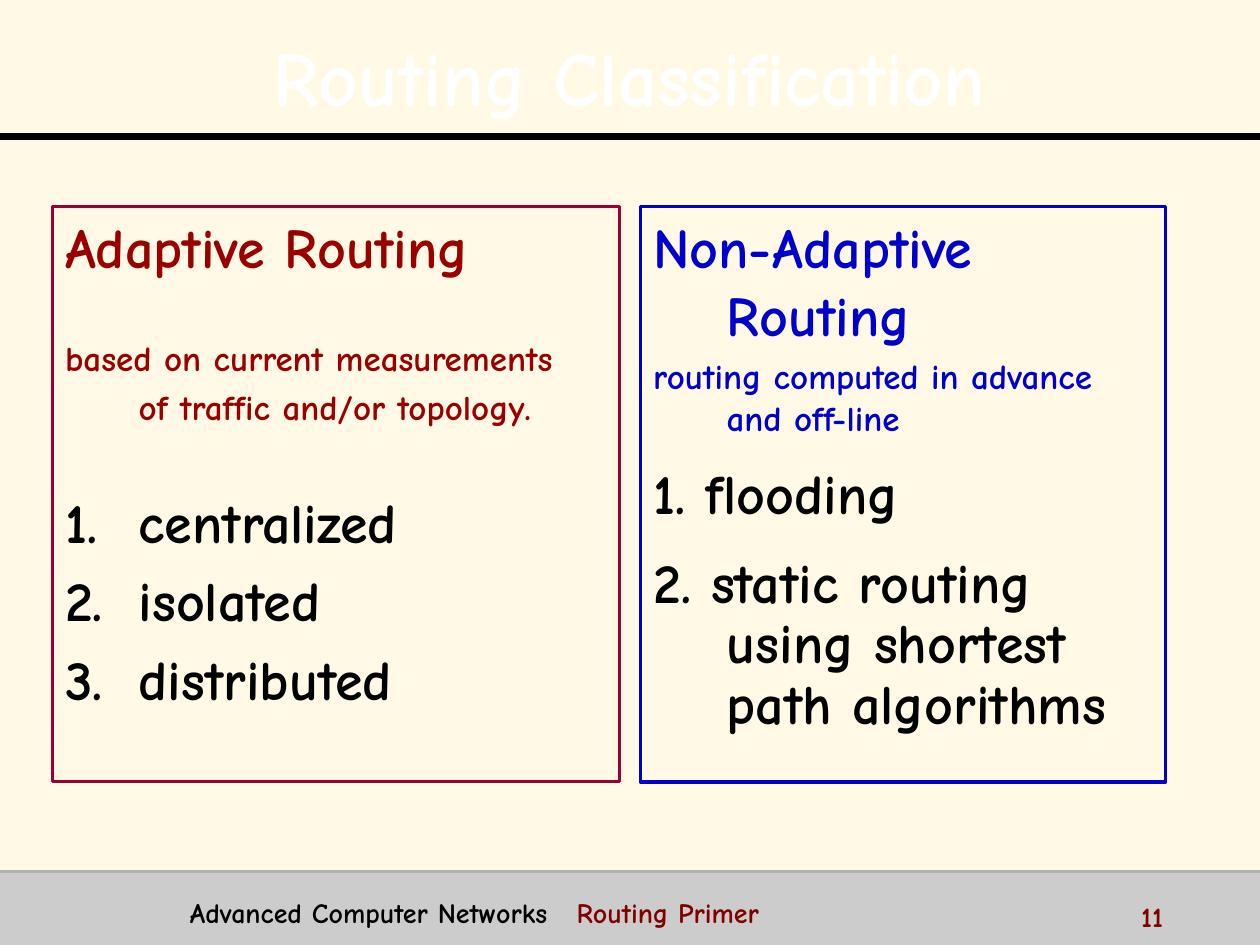
from lxml import etree
from pptx import Presentation
from pptx.dml.color import RGBColor
from pptx.enum.shapes import MSO_CONNECTOR, MSO_SHAPE
from pptx.enum.text import MSO_ANCHOR, MSO_AUTO_SIZE, PP_ALIGN
from pptx.oxml import parse_xml
from pptx.oxml.ns import nsdecls, qn
from pptx.util import Pt

STRAIGHT = MSO_CONNECTOR.STRAIGHT
RECTANGLE = MSO_SHAPE.RECTANGLE
TOP, MIDDLE = MSO_ANCHOR.TOP, MSO_ANCHOR.MIDDLE
NO_AUTOFIT = MSO_AUTO_SIZE.NONE
CENTER = PP_ALIGN.CENTER

FONT = "Comic Neue"
WIDTH, HEIGHT = 720, 540
TWO_CONTENT = 3
HANG = 42
HEADING, DETAIL = 32, 20
BLACK, WHITE, MAROON = "000000", "FFFFFF", "800000"
RED, BLUE = "990000", "0000CC"

ADAPTIVE = [
    ("Adaptive Routing", HEADING, RED, {}),
    ("based on current measurements", DETAIL, RED, {"space_before": Pt(32)}),
    ("\tof traffic and/or topology.", DETAIL, RED, {"space_before": Pt(4)}),
    ("1.\tcentralized", HEADING, BLACK, {"space_before": Pt(34.4)}),
    ("2.\tisolated", HEADING, BLACK, {"space_before": Pt(6.4)}),
    ("3.\tdistributed", HEADING, BLACK, {"space_before": Pt(6.4)}),
]
STATIC_ITEM = {"space_before": Pt(16), "line_spacing": 0.9}
NON_ADAPTIVE = [
    ("Non-Adaptive Routing", HEADING, BLUE, {}),
    ("routing computed in advance and off-line", DETAIL, BLUE,
     {"space_before": Pt(4)}),
    ("1. flooding", HEADING, BLACK, STATIC_ITEM),
    ("2. static routing using shortest path algorithms", HEADING, BLACK,
     STATIC_ITEM),
]


def rgb(hex_color):
    return RGBColor.from_string(hex_color)


def set_values(target, values):
    for name, value in values.items():
        setattr(target, name, value)


def place(shape, box):
    names = ("left", "top", "width", "height")
    set_values(shape, dict(zip(names, map(Pt, box))))


def add_run(paragraph, text, size, color):
    run = paragraph.add_run()
    run.text = text
    set_values(run.font, {"name": FONT, "size": Pt(size), "bold": True})
    run.font.color.rgb = rgb(color)
    return run


def add_rule(slide, y, color, weight):
    rule = slide.shapes.add_connector(STRAIGHT, 0, Pt(y), Pt(WIDTH), Pt(y))
    rule.line.color.rgb = rgb(color)
    rule.line.width = Pt(weight)
    etree.SubElement(rule._element.spPr, qn("a:effectLst"))


def fill_title(title, box, text):
    place(title, box)
    set_values(title.text_frame, {"vertical_anchor": MIDDLE,
                                  "auto_size": NO_AUTOFIT})
    paragraph = title.text_frame.paragraphs[0]
    set_values(paragraph, {"alignment": CENTER, "line_spacing": 1.1})
    run = add_run(paragraph, text, 44, WHITE)
    shadow = parse_xml(
        f'<a:effectLst {nsdecls("a")}><a:outerShdw dist="35921" dir="2700000">'
        f'<a:srgbClr val="{BLACK}"/></a:outerShdw></a:effectLst>')
    run.font._element.find(qn("a:solidFill")).addnext(shadow)


def fill_panel(panel, box, border, entries):
    """Outline a body placeholder and write entries with a hanging indent."""
    place(panel, box)
    panel.line.color.rgb = rgb(border)
    panel.line.width = Pt(2)
    frame = panel.text_frame
    set_values(frame, {"word_wrap": True, "auto_size": NO_AUTOFIT,
                       "vertical_anchor": TOP})
    for index, (text, size, color, spacing) in enumerate(entries):
        paragraph = frame.add_paragraph() if index else frame.paragraphs[0]
        properties = paragraph._p.get_or_add_pPr()
        properties.set("marL", str(Pt(HANG)))
        properties.set("indent", str(-Pt(HANG)))
        etree.SubElement(properties, qn("a:buNone"))
        set_values(paragraph, {"space_before": Pt(0), "line_spacing": 1.0,
                               **spacing})
        add_run(paragraph, text, size, color)


def add_label(slide, box, parts, tab=None):
    label = slide.shapes.add_textbox(*map(Pt, box))
    label.text_frame.word_wrap = True
    paragraph = label.text_frame.paragraphs[0]
    if tab:
        stops = etree.SubElement(paragraph._p.get_or_add_pPr(), qn("a:tabLst"))
        etree.SubElement(stops, qn("a:tab"), pos=str(Pt(tab)), algn="l")
    for text, color in parts:
        add_run(paragraph, text, 16, color)


def add_footer(slide, top):
    band = slide.shapes.add_shape(RECTANGLE, 0, Pt(top), Pt(WIDTH),
                                  Pt(HEIGHT - top))
    band.shadow.inherit = False
    band.fill.solid()
    band.fill.fore_color.rgb = rgb("CCCCCC")
    band.line.fill.background()
    add_rule(slide, top, "B2B2B2", 2)
    add_label(slide, (101.5, top + 10, 524, 22),
              [("Advanced Computer Networks\t", BLACK),
               ("Routing Primer", MAROON)], tab=221)
    add_label(slide, (645, top + 12.5, 72, 18), [("11", MAROON)])


def main():
    deck = Presentation()
    set_values(deck, {"slide_width": Pt(WIDTH), "slide_height": Pt(HEIGHT)})
    slide = deck.slides.add_slide(deck.slide_layouts[TWO_CONTENT])
    slide.background.fill.solid()
    slide.background.fill.fore_color.rgb = rgb("FFF9E6")

    title, adaptive, non_adaptive = slide.placeholders
    fill_title(title, (14, 9.5, 692, 62.5), "Routing Classification")
    add_rule(slide, 78, BLACK, 4)
    fill_panel(adaptive, (30, 118, 324, 328.5), "990033", ADAPTIVE)
    fill_panel(non_adaptive, (366, 118, 300, 329), BLUE, NON_ADAPTIVE)
    add_footer(slide, 498)
    deck.save("out.pptx")


if __name__ == "__main__":
    main()
